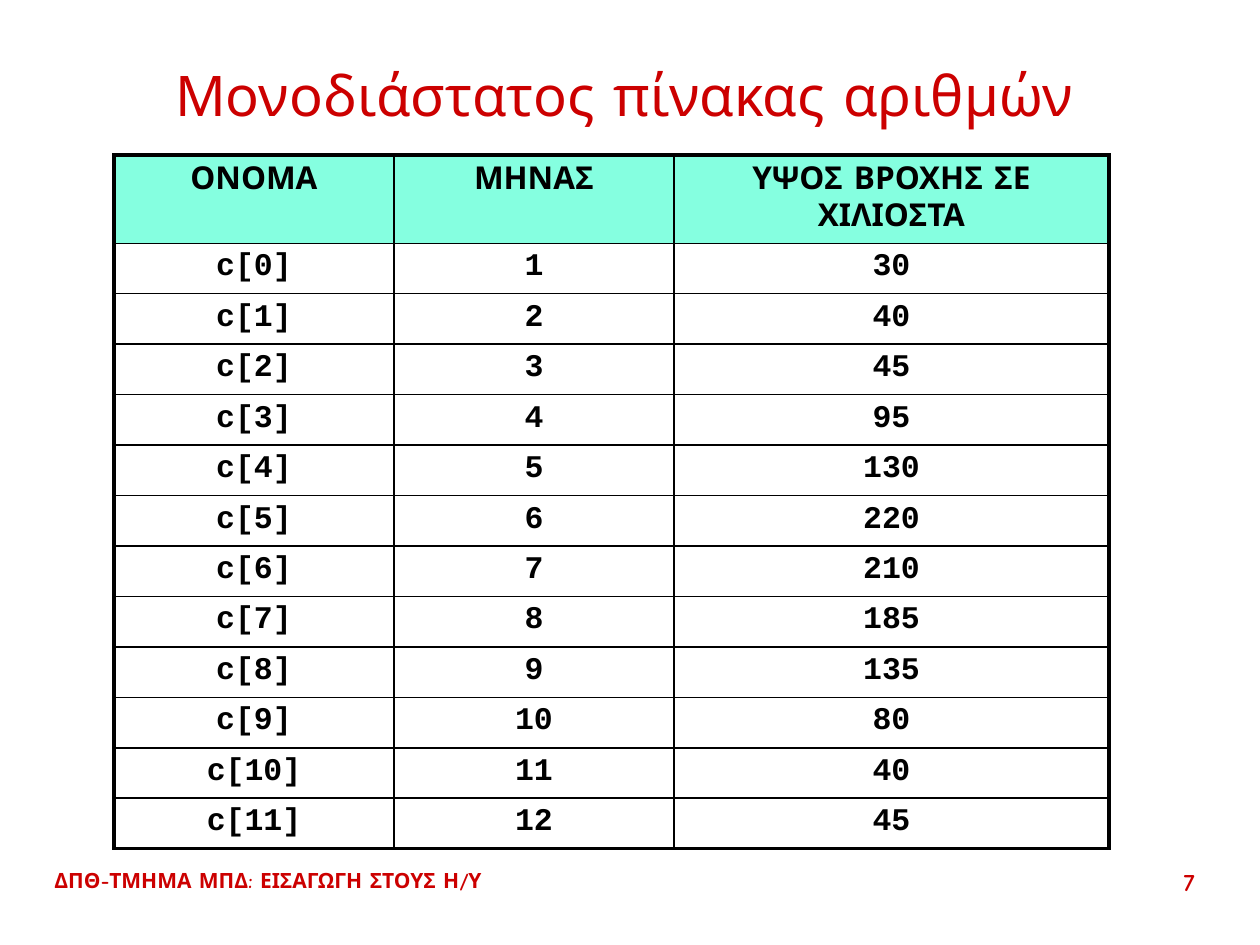
from lxml.etree import SubElement
from pptx import Presentation
from pptx.dml.color import RGBColor
from pptx.enum.text import MSO_ANCHOR as Anchor, PP_ALIGN as Align
from pptx.oxml.ns import qn
from pptx.util import Emu, Pt

EMU_PER_PX = 914400 / 126
SANS, MONO = "Comic Neue", "Courier New"
RED, BLACK, MINT = "CC0000", "000000", "85FFE0"
THIN, THICK = 1, 2.25

HEADINGS = ["ΟΝΟΜΑ", "ΜΗΝΑΣ", "ΥΨΟΣ ΒΡΟΧΗΣ ΣΕ ΧΙΛΙΟΣΤΑ"]
RAINFALL = [30, 40, 45, 95, 130, 220, 210, 185, 135, 80, 40, 45]
COLUMN_WIDTHS = [280, 280, 435]
HEADER_HEIGHT, ROW_HEIGHT = 85, 48


def px(length):
    return Emu(round(length * EMU_PER_PX))


def color(value):
    return RGBColor.from_string(value)


def write(frame, text, size, ink, align, name=SANS, bold=True):
    paragraph = frame.paragraphs[0]
    paragraph.alignment = align
    run = paragraph.add_run()
    run.text = text
    for key, value in {"size": Pt(size), "name": name, "bold": bold}.items():
        setattr(run.font, key, value)
    run.font.color.rgb = color(ink)


def add_text(slide, box, text, size, align, anchor=Anchor.TOP, bold=True):
    frame = slide.shapes.add_textbox(*map(px, box)).text_frame
    frame.word_wrap = True
    frame.vertical_anchor = anchor
    write(frame, text, size, RED, align, bold=bold)


def set_borders(cell, widths):
    """Draw the left, right, top and bottom lines of a cell."""
    properties = cell._tc.get_or_add_tcPr()
    for position, (side, width) in enumerate(widths.items()):
        line = properties.makeelement(qn(f"a:ln{side}"), w=str(Pt(width)))
        fill = SubElement(line, qn("a:solidFill"))
        SubElement(fill, qn("a:srgbClr"), val=BLACK)
        properties.insert(position, line)


def add_rainfall_table(slide, left, top):
    rows = [HEADINGS] + [
        [f"c[{index}]", str(index + 1), str(amount)]
        for index, amount in enumerate(RAINFALL)
    ]
    heights = [HEADER_HEIGHT] + [ROW_HEIGHT] * len(RAINFALL)
    last_row, last_column = len(rows) - 1, len(HEADINGS) - 1
    box = (left, top, sum(COLUMN_WIDTHS), sum(heights))
    table = slide.shapes.add_table(len(rows), len(HEADINGS), *map(px, box)).table
    table.first_row = table.horz_banding = False
    for column, width in zip(table.columns, COLUMN_WIDTHS):
        column.width = px(width)

    for r, values in enumerate(rows):
        table.rows[r].height = px(heights[r])
        for c, text in enumerate(values):
            cell = table.cell(r, c)
            if r == 0:
                cell.fill.solid()
                cell.fill.fore_color.rgb = color(MINT)
            else:
                cell.fill.background()
            write(cell.text_frame, text, 18, BLACK, Align.CENTER,
                  name=MONO if r else SANS)
            # The outer frame is thicker than the inner grid
            outer = {"L": c == 0, "R": c == last_column,
                     "T": r == 0, "B": r == last_row}
            set_borders(cell, {side: THICK if edge else THIN
                               for side, edge in outer.items()})


def add_footer(slide, left, top, width, height):
    number_width = 158
    add_text(slide, (left, top, 976, height),
             "ΔΠΘ-ΤΜΗΜΑ ΜΠΔ: ΕΙΣΑΓΩΓΗ ΣΤΟΥΣ Η/Υ", 12, Align.LEFT)
    add_text(slide, (left + width - number_width, top, number_width, height),
             "7", 14, Align.RIGHT)


def main():
    presentation = Presentation()
    presentation.slide_width, presentation.slide_height = px(1260), px(945)
    slide = presentation.slides.add_slide(presentation.slide_layouts[6])

    # Footer, title, table
    add_footer(slide, 42, 861, 1165, 63)
    add_text(slide, (42, 42, 1165, 105), "Μονοδιάστατος πίνακας αριθμών",
             32, Align.CENTER, Anchor.MIDDLE, bold=False)
    add_rainfall_table(slide, 114, 155)
    presentation.save("out.pptx")


if __name__ == "__main__":
    main()
